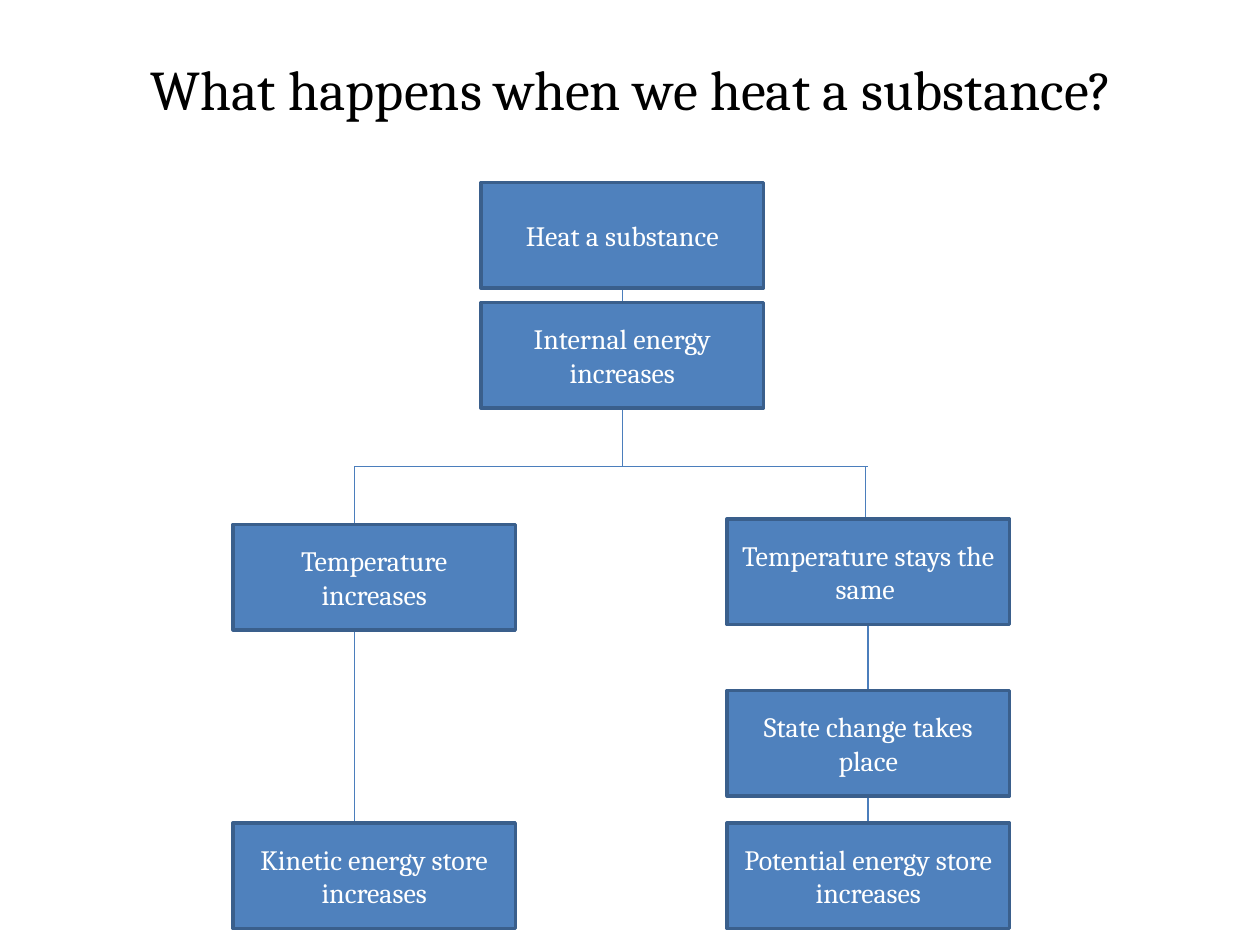
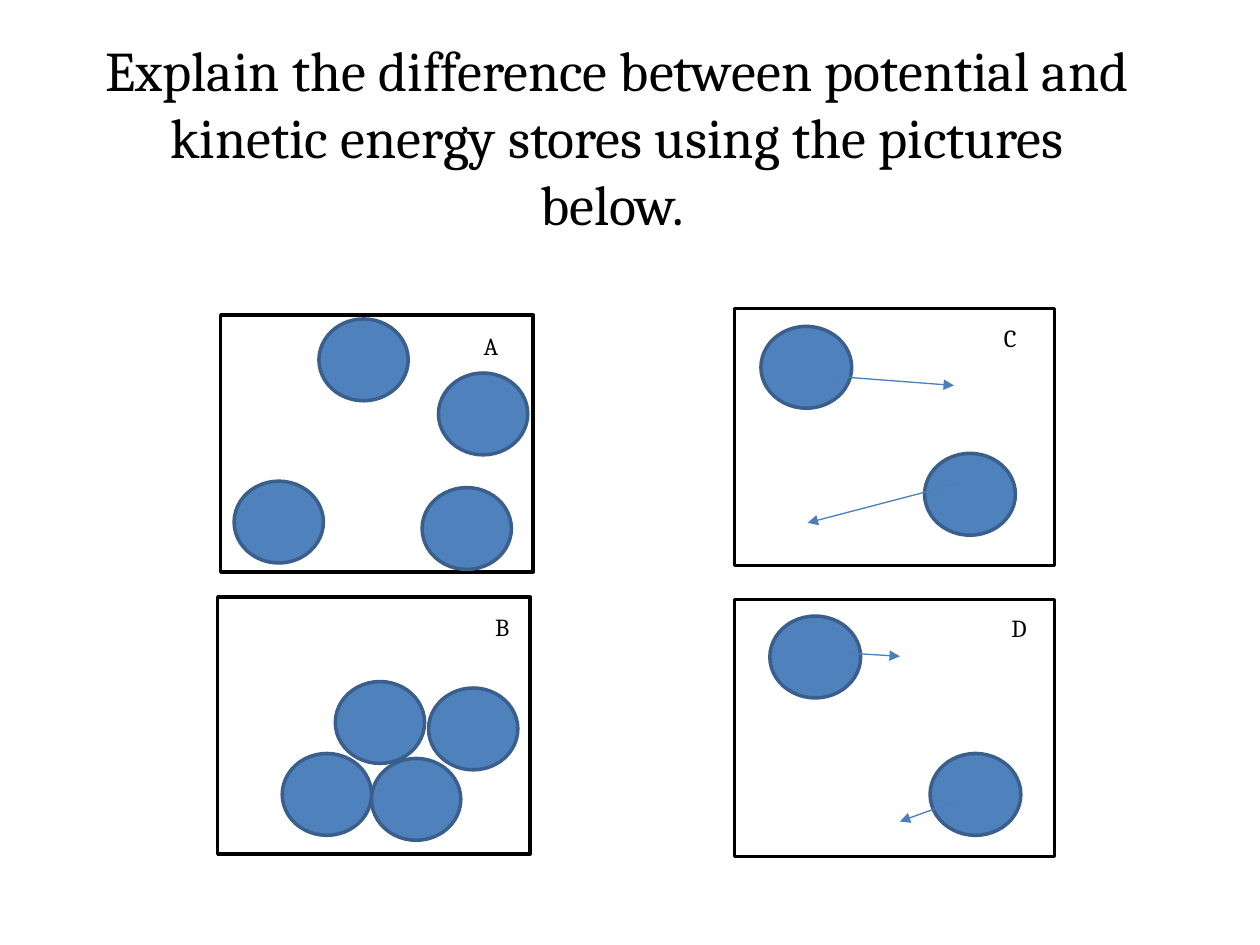
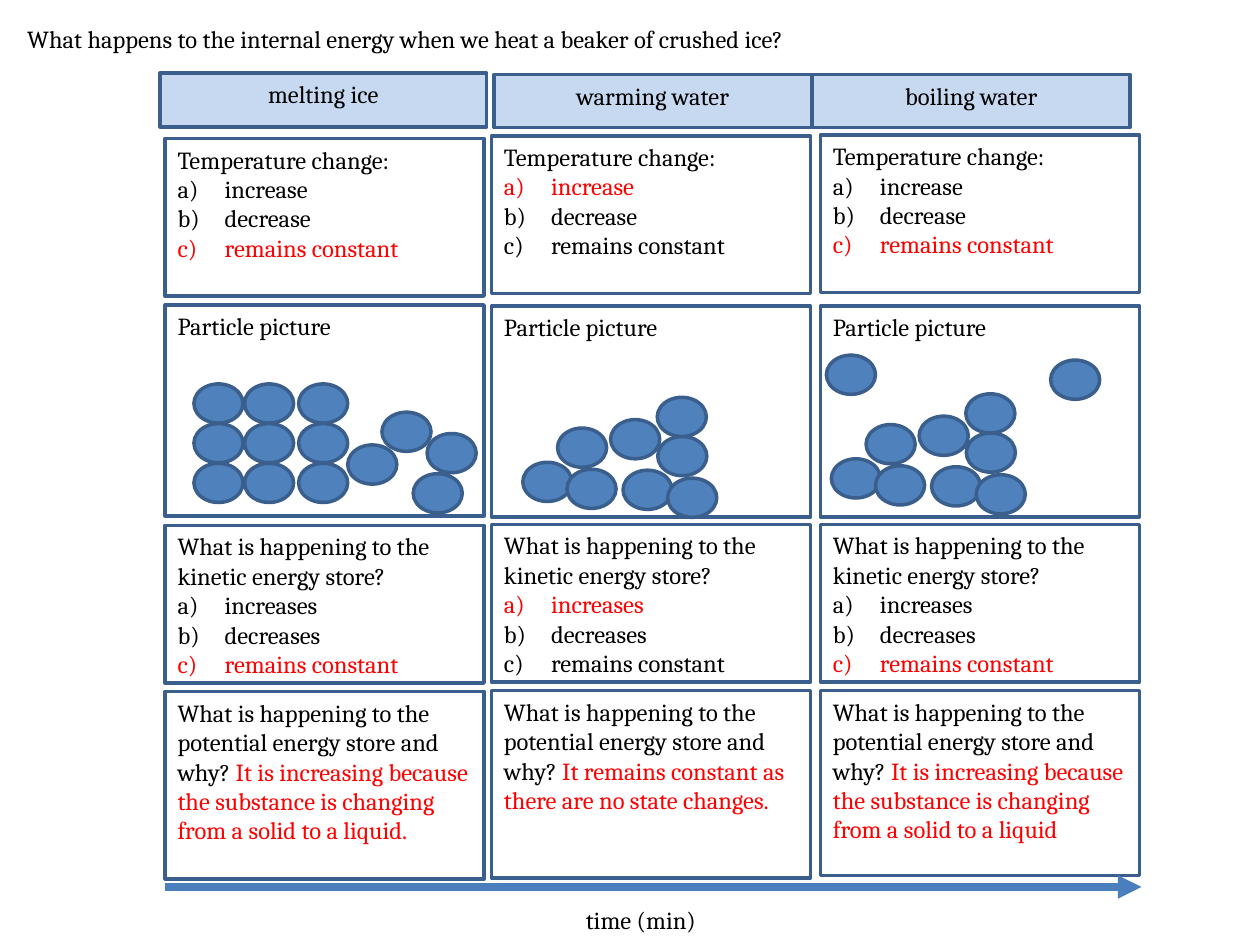
from dataclasses import dataclass

from lxml.etree import SubElement
from pptx import Presentation
from pptx.dml.color import RGBColor
from pptx.enum.shapes import MSO_CONNECTOR, MSO_SHAPE
from pptx.enum.text import MSO_ANCHOR, MSO_AUTO_SIZE, PP_ALIGN
from pptx.oxml.ns import qn
from pptx.util import Cm, Pt


@dataclass(frozen=True)
class Theme:
    font: str = "Cambria"
    text: str = "000000"
    answer: str = "FF0000"
    light: str = "FFFFFF"
    accent: str = "4F81BD"
    outline: str = "3A5F8C"
    connector: str = "4B7EBC"
    header: str = "C6D9F1"
    title_size: int = 32
    box_size: int = 16
    body_size: int = 14
    outline_width: float = 2
    connector_width: float = 0.75
    axis_width: float = 4.5


@dataclass(frozen=True)
class TextLine:
    runs: tuple
    numbered: bool = False


class Deck:
    def __init__(self, theme):
        self.theme = theme
        self.presentation = Presentation()
        self.presentation.slide_width = Cm(25.4)
        self.presentation.slide_height = Cm(19.05)
        self.slide = None

    def add_slide(self, layout_name):
        layout = self.presentation.slide_layouts.get_by_name(layout_name)
        self.slide = self.presentation.slides.add_slide(layout)

    def fill_text(self, frame, lines, size, align=PP_ALIGN.LEFT, anchor=MSO_ANCHOR.TOP):
        frame.word_wrap = True
        frame.vertical_anchor = anchor
        for index, line in enumerate(lines):
            paragraph = frame.add_paragraph() if index else frame.paragraphs[0]
            paragraph.alignment = align
            properties = paragraph._p.get_or_add_pPr()
            indent = Cm(0.95) if line.numbered else 0
            properties.set("marL", str(indent))
            properties.set("indent", str(-indent))
            if line.numbered:
                SubElement(properties, qn("a:buAutoNum"), type="alphaLcParenR")
            else:
                SubElement(properties, qn("a:buNone"))
            for text, color in line.runs:
                run = paragraph.add_run()
                run.text = text
                run.font.name = self.theme.font
                run.font.size = Pt(size)
                run.font.color.rgb = RGBColor.from_string(color)

    def placeholder(self, index, text, left, top, width, height, anchor):
        shape = self.slide.placeholders[index]
        shape.left, shape.top = Cm(left), Cm(top)
        shape.width, shape.height = Cm(width), Cm(height)
        shape.text_frame.auto_size = MSO_AUTO_SIZE.NONE
        self.fill_text(shape.text_frame, [self.plain(text)], self.theme.title_size,
                       PP_ALIGN.CENTER, anchor)

    def plain(self, text):
        return TextLine(((text, self.theme.text),))

    def shape(self, kind, left, top, width, height, fill, outline):
        shape = self.slide.shapes.add_shape(kind, Cm(left), Cm(top), Cm(width), Cm(height))
        shape.shadow.inherit = False
        if fill:
            shape.fill.solid()
            shape.fill.fore_color.rgb = RGBColor.from_string(fill)
        else:
            shape.fill.background()
        shape.line.color.rgb = RGBColor.from_string(outline)
        shape.line.width = Pt(self.theme.outline_width)
        return shape

    def frame(self, left, top, width, height):
        self.shape(MSO_SHAPE.RECTANGLE, left, top, width, height, None, self.theme.text)

    def particle(self, left, top, width, height):
        self.shape(MSO_SHAPE.OVAL, left, top, width, height,
                   self.theme.accent, self.theme.outline)

    def flow_box(self, text, left, top):
        shape = self.shape(MSO_SHAPE.RECTANGLE, left, top, 5.69, 2.13,
                           self.theme.accent, self.theme.outline)
        self.fill_text(shape.text_frame, [TextLine(((text, self.theme.light),))],
                       self.theme.box_size, PP_ALIGN.CENTER, MSO_ANCHOR.MIDDLE)

    def card(self, lines, left, top, width, height):
        shape = self.shape(MSO_SHAPE.RECTANGLE, left, top, width, height,
                           self.theme.light, self.theme.outline)
        self.fill_text(shape.text_frame, lines, self.theme.body_size)

    def header(self, text, left, top, width, height):
        shape = self.shape(MSO_SHAPE.RECTANGLE, left, top, width, height,
                           self.theme.header, self.theme.outline)
        self.fill_text(shape.text_frame, [self.plain(text)], self.theme.body_size,
                       PP_ALIGN.CENTER)

    def label(self, text, left, top, width):
        box = self.slide.shapes.add_textbox(Cm(left), Cm(top), Cm(width), Cm(0.86))
        box.text_frame.auto_size = MSO_AUTO_SIZE.SHAPE_TO_FIT_TEXT
        self.fill_text(box.text_frame, [self.plain(text)], self.theme.body_size)

    def connector(self, start, end, width=None, arrow=False):
        line = self.slide.shapes.add_connector(
            MSO_CONNECTOR.STRAIGHT, *(Cm(value) for value in (*start, *end)))
        line.line.color.rgb = RGBColor.from_string(self.theme.connector)
        line.line.width = Pt(width or self.theme.connector_width)
        properties = line.element.spPr
        if arrow:
            SubElement(properties.find(qn("a:ln")), qn("a:tailEnd"), type="triangle")
        SubElement(properties, qn("a:effectLst"))


def build_heating_flow(deck):
    deck.add_slide("Title Only")
    deck.placeholder(0, "What happens when we heat a substance? ",
                     1.02, 0.18, 23.7, 3.18, MSO_ANCHOR.MIDDLE)
    branch_top = 9.4
    for start, end in (
        ((17.45, branch_top), (17.45, 11)),
        ((17.5, 12.5), (17.5, 16.92)),
        ((7.14, branch_top), (7.14, 16.92)),
        ((12.55, 5.84), (12.55, branch_top)),
        ((7.14, branch_top), (17.5, branch_top)),
    ):
        deck.connector(start, end)
    left, center, right = 4.7, 9.7, 14.66
    for text, column, top in (
        ("Heat a substance", center, 3.68),
        ("Internal energy increases", center, 6.1),
        ("Temperature increases", left, 10.57),
        ("Temperature stays the same ", right, 10.46),
        ("State change takes place", right, 13.92),
        ("Kinetic energy store increases", left, 16.59),
        ("Potential energy store increases", right, 16.59),
    ):
        deck.flow_box(text, column, top)


def build_energy_stores(deck):
    deck.add_slide("Title and Content")
    title = deck.slide.shapes.title.element
    title.getparent().remove(title)
    deck.placeholder(1, "Explain the difference between potential and kinetic energy "
                     "stores using the pictures below. ",
                     1.65, 0.58, 21.59, 12.57, MSO_ANCHOR.TOP)
    panels = (
        ("A", (9.5, 6.55), (4.45, 6.35, 6.3), 1.8,
         ((6.43, 6.43), (8.51, 9.83), (4.72, 9.7), (8.84, 7.52)), ()),
        ("B", (9.73, 12.22), (4.39, 12.04, 6.3), 1.8,
         ((5.69, 15.19), (7.49, 15.29), (6.76, 13.74), (8.64, 13.87)), ()),
        ("C", (19.99, 6.38), (14.81, 6.22, 6.45), 1.83,
         ((15.34, 6.58), (18.64, 9.14)),
         (((16.87, 7.59), (19.23, 7.77)), ((19.38, 9.73), (16.28, 10.54)))),
        ("D", (20.14, 12.24), (14.81, 12.09, 6.45), 1.83,
         ((15.52, 12.42), (18.75, 15.19)),
         (((17.02, 13.16), (18.14, 13.23)), ((19.33, 16.13), (18.14, 16.56)))),
    )
    for letter, label_place, frame_place, diameter, particles, arrows in panels:
        deck.frame(*frame_place, 5.18)
        for left, top in particles:
            deck.particle(left, top, diameter, 1.65)
        for start, end in arrows:
            deck.connector(start, end, arrow=True)
        deck.label(letter, *label_place, 2.69)


def question(theme, prompt, options, correct):
    choices = [TextLine(((option, theme.answer if option == correct else theme.text),), True)
               for option in options]
    return [TextLine(((prompt, theme.text),)), *choices]


def build_ice_timeline(deck):
    theme = deck.theme
    deck.add_slide("Blank")
    deck.label("What happens to the internal energy when we heat a beaker of crushed ice?",
               0.3, 0.36, 20.4)
    deck.label("time (min)", 11.56, 18.11, 5.77)

    constant = "remains constant"
    melting = "It is increasing because the substance is changing from a solid to a liquid"
    stages = (
        ("melting ice", (3.23, 1.47, 6.58, 1.09), 3.33, (2.79, 6.15, 10.59, 13.94),
         3.78, constant, constant, melting + "."),
        ("warming water", (9.96, 1.5, 6.4, 1.07), 9.91, (2.74, 6.17, 10.57, 13.92),
         3.78, "increase", "increases",
         "It remains constant as there are no state changes."),
        ("boiling water", (16.38, 1.5, 6.4, 1.07), 16.54, (2.72, 6.17, 10.57, 13.92),
         3.73, constant, constant, melting),
    )
    for name, header_place, left, tops, last_height, temperature, kinetic, potential in stages:
        deck.header(name, *header_place)
        contents = (
            question(theme, "Temperature change:",
                     ("increase", "decrease", constant), temperature),
            [deck.plain("Particle picture")],
            question(theme, "What is happening to the kinetic energy store?",
                     ("increases", "decreases", constant), kinetic),
            [TextLine((("What is happening to the potential energy store and why? ",
                        theme.text), (potential, theme.answer)))],
        )
        for lines, top, height in zip(contents, tops, (3.18, 4.25, 3.18, last_height)):
            deck.card(lines, left, top, 6.43, height)
    deck.connector((3.33, 17.88), (23.01, 17.88), theme.axis_width, arrow=True)

    solid = [(left, 7.74 + row * 0.8) for left in (3.91, 4.93, 6.02) for row in range(3)]
    melted = [(7.01, 8.97), (7.7, 8.31), (8.61, 8.74), (8.33, 9.55)]
    cluster = ((0, 0), (0.7, -0.69), (0.89, 0.14), (2.02, 0.16),
               (2.72, -0.52), (2.92, 0.32), (1.77, -0.86), (2.71, -1.31))
    liquid = [(left + across, top + down)
              for left, top in ((10.54, 9.32), (16.76, 9.25)) for across, down in cluster]
    steam = [(21.18, 7.26), (16.66, 7.16)]
    for left, top in solid + melted + liquid + steam:
        deck.particle(left, top, 0.99, 0.79)


def main():
    deck = Deck(Theme())
    build_heating_flow(deck)
    build_energy_stores(deck)
    build_ice_timeline(deck)
    deck.presentation.save("out.pptx")


if __name__ == "__main__":
    main()
